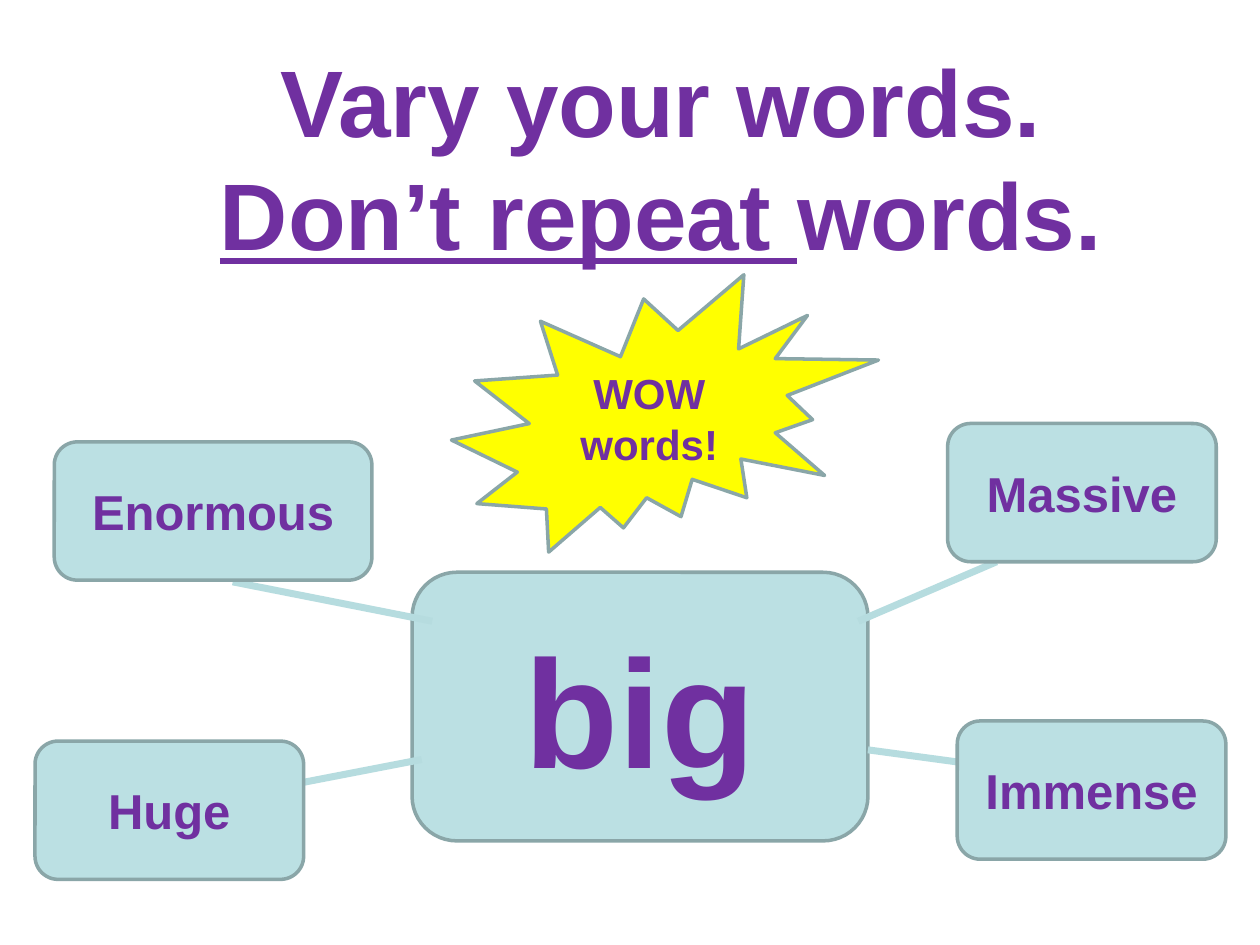
from dataclasses import dataclass

import pptx
import pptx.dml.color
import pptx.enum.shapes
import pptx.enum.text
import pptx.oxml.ns
import pptx.util
from lxml import etree

Pt = pptx.util.Pt
Kind = pptx.enum.shapes.MSO_SHAPE
Align = pptx.enum.text.PP_ALIGN
Anchor = pptx.enum.text.MSO_ANCHOR


@dataclass(frozen=True)
class Theme:
    font: str = "Arial"
    ink: str = "7030A0"
    box: str = "BBE0E3"
    burst: str = "FFFF00"
    edge: str = "8AA6A8"
    link: str = "B6DCDF"
    title: int = 54
    hub: int = 88
    word: int = 28
    wow: int = 24
    rim: int = 2
    stroke: int = 4


THEME = Theme()
SMALL = (153.5, 79)
WIDE = (181.5, 79)

# word, left and top, size
WORDS = [
    ("Massive", (541.5, 242), SMALL),
    ("Immense", (547, 412), SMALL),
    ("Huge", (20, 423.5), SMALL),
    ("Enormous", (31, 252.5), WIDE),
]
# from, to
LINKS = [
    ((490.5, 355), (569.5, 321)),
    ((150.5, 451.5), (241, 434)),
    ((496, 428.5), (581, 440)),
    ((133, 332.5), (247, 355)),
]


def color(code):
    return pptx.dml.color.RGBColor.from_string(code)


def style(frame, size):
    """Centre the paragraphs and set the font of every run."""
    for para in frame.paragraphs:
        para.alignment = Align.CENTER
        for run in para.runs:
            font = run.font
            font.name, font.size, font.bold = THEME.font, Pt(size), True
            font.color.rgb = color(THEME.ink)


def add_title(slide, spot, size):
    box = slide.shapes.add_textbox(*map(Pt, spot + size))
    frame = box.text_frame
    frame.text = "Vary your words."
    para = frame.add_paragraph()
    para.text = "Don’t repeat "
    para.runs[0].font.underline = True
    para.add_run().text = "words."
    frame.word_wrap = False
    style(frame, THEME.title)


def add_box(slide, text, spot, size, points, kind=Kind.ROUNDED_RECTANGLE,
            fill=THEME.box):
    shape = slide.shapes.add_shape(kind, *map(Pt, spot + size))
    shape.shadow.inherit = False
    shape.fill.solid()
    shape.fill.fore_color.rgb = color(fill)
    shape.line.color.rgb = color(THEME.edge)
    shape.line.width = Pt(THEME.rim)
    frame = shape.text_frame
    frame.text = text
    frame.word_wrap = True
    frame.vertical_anchor = Anchor.MIDDLE
    style(frame, points)


def add_link(slide, start, end):
    line = slide.shapes.add_connector(
        pptx.enum.shapes.MSO_CONNECTOR.STRAIGHT, *map(Pt, start + end))
    line.line.color.rgb = color(THEME.link)
    line.line.width = Pt(THEME.stroke)
    etree.SubElement(line.element.spPr, pptx.oxml.ns.qn("a:effectLst"))


def main():
    deck = pptx.Presentation()
    deck.slide_width, deck.slide_height = Pt(720), Pt(540)
    slide = deck.slides.add_slide(deck.slide_layouts[6])
    add_title(slide, (116, 21), (523.5, 138))
    add_box(slide, "big", (235.5, 327), (260.5, 153.5), THEME.hub)
    for start, end in LINKS:
        add_link(slide, start, end)
    for text, spot, size in WORDS:
        add_box(slide, text, spot, size, THEME.word)
    add_box(slide, "WOW words!", (258, 157), (244, 158.5), THEME.wow,
            Kind.EXPLOSION2, THEME.burst)
    deck.save("out.pptx")


if __name__ == "__main__":
    main()
